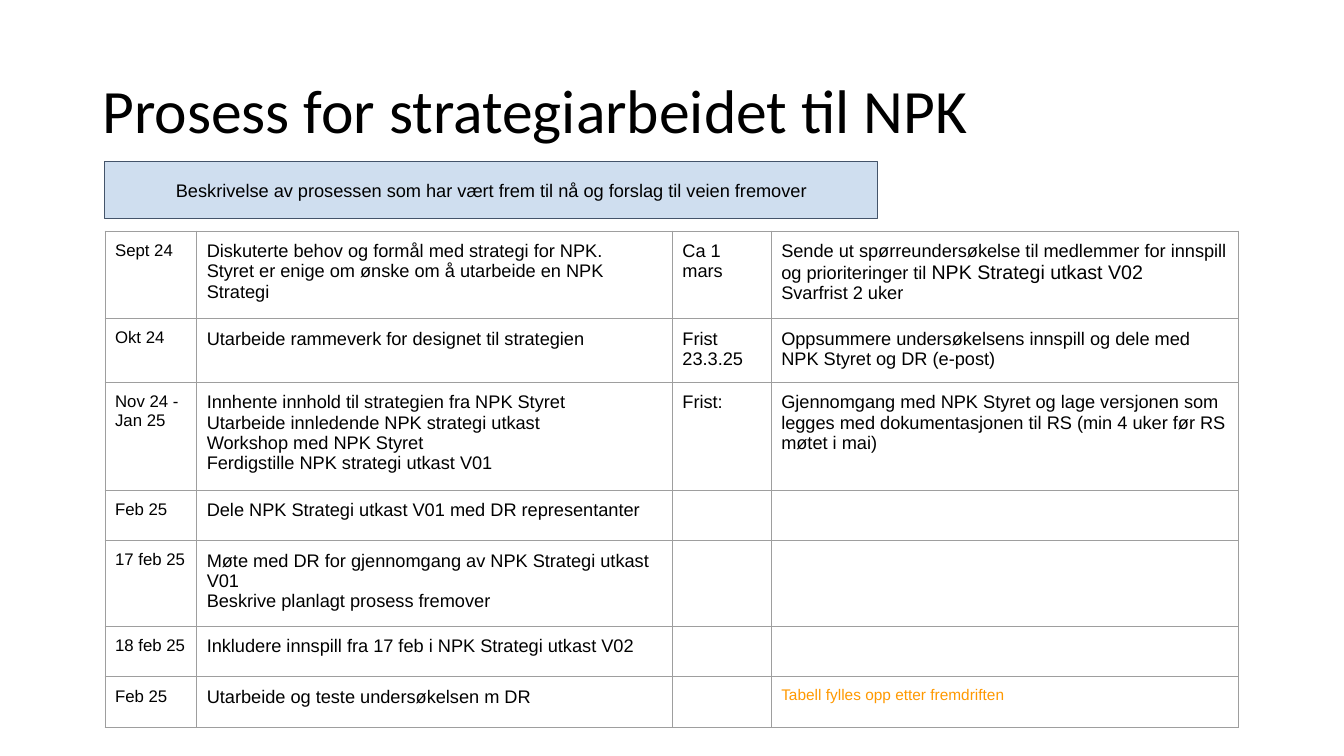
from lxml import etree
from pptx import Presentation
from pptx.dml.color import RGBColor
from pptx.enum import shapes, text
from pptx.oxml.ns import qn
from pptx.util import Pt

COLORS = {"text": "000000", "note": "FF9900", "box": "CFDEEF",
          "outline": "44546A", "grid": "9E9E9E"}
COLUMNS = [65.5, 339.8, 70.6, 334.1]
HEIGHTS = [58.5, 43.5, 72, 35, 58, 34.5, 35]
SIZES = [12, 13, 13, 13]
ROWS = [
    ["Sept 24",
     "Diskuterte behov og formål med strategi for NPK.\n"
     "Styret er enige om ønske om å utarbeide en NPK Strategi",
     "Ca 1 mars",
     [[("Sende ut spørreundersøkelse til medlemmer for innspill og prioriteringer til ", {}),
       ("NPK Strategi utkast V02", {"size": 14})],
      [("Svarfrist 2 uker", {})]]],
    ["Okt 24", "Utarbeide rammeverk for designet til strategien", "Frist\n23.3.25",
     "Oppsummere undersøkelsens innspill og dele med NPK Styret og DR (e-post)"],
    ["Nov 24 -\nJan 25",
     "Innhente innhold til strategien fra NPK Styret\n"
     "Utarbeide innledende NPK strategi utkast\n"
     "Workshop med NPK Styret\n"
     "Ferdigstille NPK strategi utkast V01",
     "Frist:",
     "Gjennomgang med NPK Styret og lage versjonen som legges med "
     "dokumentasjonen til RS (min 4 uker før RS møtet i mai)"],
    ["Feb 25", "Dele NPK Strategi utkast V01 med DR representanter", "", ""],
    ["17 feb 25",
     "Møte med DR for gjennomgang av NPK Strategi utkast V01\n"
     "Beskrive planlagt prosess fremover", "", ""],
    ["18 feb 25", "Inkludere innspill fra 17 feb i NPK Strategi utkast V02", "", ""],
    ["Feb 25", "Utarbeide og teste undersøkelsen m DR", "",
     [[("Tabell fylles opp etter fremdriften", {"size": 11, "color": "note"})]]],
]


def rgb(name):
    return RGBColor.from_string(COLORS[name])


def write(tf, content, size=13, font="Arial", color="text", align=None, spacing=None):
    if isinstance(content, str):
        content = [[(line, {})] for line in content.split("\n")]
    for i, runs in enumerate(content):
        p = tf.add_paragraph() if i else tf.paragraphs[0]
        p.alignment = align
        p.line_spacing = spacing
        for words, style in runs:
            r = p.add_run()
            r.text = words
            r.font.name = font
            r.font.size = Pt(style.get("size", size))
            r.font.color.rgb = rgb(style.get("color", color))


def set_frame(tf, side, top):
    tf.word_wrap = True
    tf.vertical_anchor = text.MSO_ANCHOR.MIDDLE
    tf.margin_left = tf.margin_right = Pt(side)
    tf.margin_top = tf.margin_bottom = Pt(top)


def add_title(s, x, y, w, h):
    tf = s.shapes.add_textbox(Pt(x), Pt(y), Pt(w), Pt(h)).text_frame
    set_frame(tf, 7.2, 3.6)
    write(tf, "Prosess for strategiarbeidet til NPK", size=44, font="Calibri", spacing=0.9)


def add_summary(s, x, y, w, h):
    sp = s.shapes.add_shape(shapes.MSO_SHAPE.RECTANGLE, Pt(x), Pt(y), Pt(w), Pt(h))
    sp.shadow.inherit = False
    sp.fill.solid()
    sp.fill.fore_color.rgb = rgb("box")
    sp.line.color.rgb = rgb("outline")
    sp.line.width = Pt(0.75)
    set_frame(sp.text_frame, 7.2, 7.2)
    write(sp.text_frame,
          "Beskrivelse av prosessen som har vært frem til nå og forslag til veien fremover",
          align=text.PP_ALIGN.CENTER)


def set_borders(cell):
    tcPr = cell._tc.get_or_add_tcPr()
    for i, side in enumerate(("lnL", "lnR", "lnT", "lnB")):
        ln = etree.Element(qn(f"a:{side}"), w=str(Pt(0.75)))
        fill = etree.SubElement(ln, qn("a:solidFill"))
        etree.SubElement(fill, qn("a:srgbClr"), val=COLORS["grid"])
        tcPr.insert(i, ln)


def add_schedule(s, x, y, w, h):
    table = s.shapes.add_table(len(ROWS), len(COLUMNS), Pt(x), Pt(y), Pt(w), Pt(h)).table
    table.first_row = table.horz_banding = False
    for column, width in zip(table.columns, COLUMNS):
        column.width = Pt(width)
    for row, height, contents in zip(table.rows, HEIGHTS, ROWS):
        row.height = Pt(height)
        for cell, content, size in zip(row.cells, contents, SIZES):
            cell.margin_left = cell.margin_right = Pt(7.2)
            cell.margin_top = cell.margin_bottom = Pt(7.2)
            cell.fill.background()
            set_borders(cell)
            if content:
                write(cell.text_frame, content, size=size)


def main():
    prs = Presentation()
    prs.slide_width, prs.slide_height = Pt(960), Pt(540)
    s = prs.slides.add_slide(prs.slide_layouts[6])
    add_title(s, 66, 28.8, 828, 104.4)
    add_schedule(s, 75, 165, sum(COLUMNS), sum(HEIGHTS))
    add_summary(s, 75, 115.4, 551.5, 40.5)
    prs.save("out.pptx")


if __name__ == "__main__":
    main()
